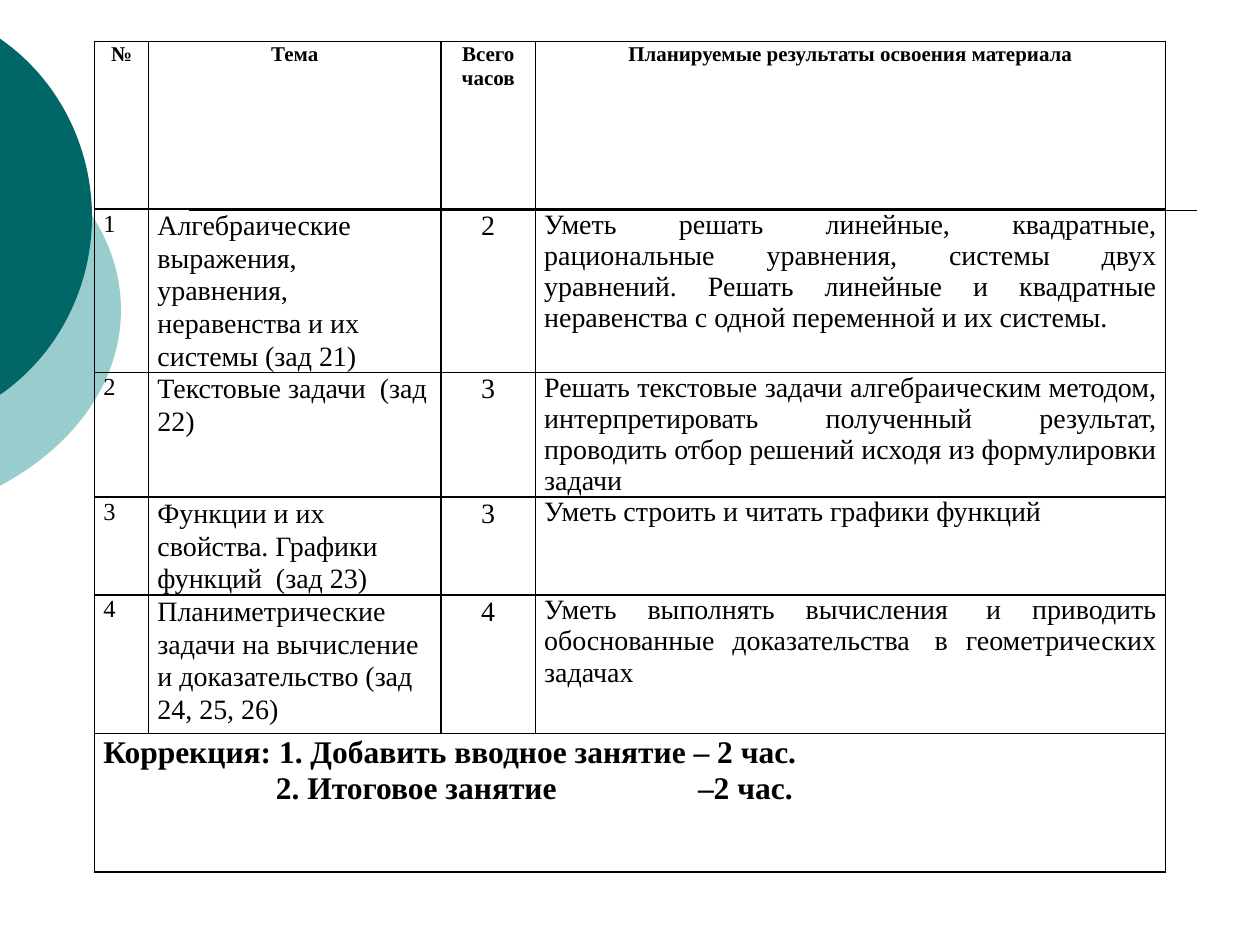
from dataclasses import dataclass

from lxml.etree import SubElement
from pptx import Presentation
from pptx.dml.color import RGBColor
from pptx.enum.shapes import MSO_CONNECTOR
from pptx.enum.text import PP_ALIGN as Align
from pptx.oxml.ns import qn
from pptx.util import Inches, Pt


@dataclass(frozen=True)
class Theme:
    font: str = "Times New Roman"
    ink: RGBColor = RGBColor(0, 0, 0)
    dark: RGBColor = RGBColor(0x00, 0x66, 0x66)
    light: RGBColor = RGBColor(0x99, 0xCC, 0xCC)
    header: int = 12
    number: int = 14
    body: int = 16
    note: int = 18
    rule: int = 1


theme = Theme()
NO_BREAK_SPACE = chr(160)


def add_border(cell):
    """Draw a solid line on all four sides of a cell."""
    properties = cell._tc.get_or_add_tcPr()
    for position, side in enumerate(("lnL", "lnR", "lnT", "lnB")):
        line = SubElement(properties, qn(f"a:{side}"), w=str(Pt(theme.rule)))
        fill = SubElement(line, qn("a:solidFill"))
        SubElement(fill, qn("a:srgbClr"), val=str(theme.ink))
        properties.remove(line)
        properties.insert(position, line)


def write_cell(cell, lines, size, align=Align.LEFT, bold=False, spacing=1.05):
    """Fill a cell with paragraphs of one style."""
    cell.margin_left = cell.margin_right = Inches(0.07)
    cell.margin_top = cell.margin_bottom = 0
    cell.text = "\n".join(lines)
    for paragraph in cell.text_frame.paragraphs:
        paragraph.alignment = align
        paragraph.line_spacing = spacing
        font = paragraph.font
        font.name, font.size, font.bold = theme.font, Pt(size), bold
        font.color.rgb = theme.ink


presentation = Presentation()
presentation.slide_width, presentation.slide_height = Inches(10), Inches(7.5)
slide = presentation.slides.add_slide(presentation.slide_layouts[6])

# Round segments cut by the left edge: color, frame, then the upper curve
# (start, two controls, end); the lower curve mirrors it about its end
segments = [
    (theme.light, (-3.54, 0.75, 4.5, 3.42),
     [(-0.01, 1.06), (0.6, 1.38), (0.96, 1.9), (0.96, 2.46)]),
    (theme.dark, (-2.65, 0, 3.38, 3.45),
     [(-0.01, 0.3), (0.46, 0.62), (0.73, 1.16), (0.73, 1.72)]),
]
for color, (left, top, width, height), upper in segments:
    middle = upper[-1][1]
    lower = [(x, 2 * middle - y) for x, y in reversed(upper[:-1])]
    builder = slide.shapes.build_freeform(Inches(left), Inches(top))
    builder.add_line_segments([(Inches(left + width), Inches(top + height))])
    shape = builder.convert_to_shape()
    shape.shadow.inherit = False
    shape.fill.solid()
    shape.fill.fore_color.rgb = color
    shape.line.fill.background()

    # Replace the straight outline by the two Bezier curves
    outline = shape._element.spPr.find(".//" + qn("a:pathLst"))[0]
    for child in list(outline):
        outline.remove(child)
    commands = [("moveTo", upper[:1]), ("cubicBezTo", upper[1:]),
                ("cubicBezTo", lower), ("close", [])]
    for command, points in commands:
        element = SubElement(outline, qn(f"a:{command}"))
        for x, y in points:
            SubElement(element, qn("a:pt"),
                       x=str(Inches(x - left)), y=str(Inches(y - top)))

# Horizontal rule behind the table
rule = slide.shapes.add_connector(
    MSO_CONNECTOR.STRAIGHT, Inches(1.5), Inches(1.67), Inches(9.5), Inches(1.67))
rule.line.color.rgb = theme.ink
rule.line.width = Pt(theme.rule)
SubElement(rule._element.spPr, qn("a:effectLst"))

# Table grid
column_widths = [0.43, 2.32, 0.75, 5]
row_heights = [1.33, 0.82, 0.82, 0.68, 1.1, 1.1]
table = slide.shapes.add_table(
    len(row_heights), len(column_widths), Inches(0.75), Inches(0.33),
    Inches(sum(column_widths)), Inches(sum(row_heights))).table
table.first_row = table.horz_banding = False
for column, width in zip(table.columns, column_widths):
    column.width = Inches(width)
for row, height in zip(table.rows, row_heights):
    row.height = Inches(height)
for cell in table.iter_cells():
    cell.fill.background()
    add_border(cell)

# Header row
headings = ["№", "Тема", "Всего часов", "Планируемые результаты освоения материала"]
for column, heading in enumerate(headings):
    write_cell(table.cell(0, column), [heading], theme.header, Align.CENTER, bold=True)

# Topics: name, hours, planned results
topics = [
    ("Алгебраические выражения, уравнения, неравенства и их системы (зад 21)", 2,
     "Уметь решать линейные, квадратные, рациональные уравнения, системы двух "
     "уравнений. Решать линейные и квадратные неравенства с одной переменной "
     "и их системы."),
    ("Текстовые задачи  (зад 22)", 3,
     "Решать текстовые задачи алгебраическим методом, интерпретировать полученный "
     "результат, проводить отбор решений исходя из формулировки задачи"),
    ("Функции и их свойства. Графики функций  (зад 23)", 3,
     "Уметь строить и читать графики функций"),
    ("Планиметрические задачи на вычисление и доказательство (зад 24, 25, 26)", 4,
     f"Уметь выполнять вычисления {NO_BREAK_SPACE}и приводить обоснованные "
     f"доказательства {NO_BREAK_SPACE}в геометрических задачах"),
]
for number, (topic, hours, results) in enumerate(topics, start=1):
    write_cell(table.cell(number, 0), [str(number)], theme.number)
    write_cell(table.cell(number, 1), [topic], theme.body)
    write_cell(table.cell(number, 2), [str(hours)], theme.body, Align.CENTER)
    write_cell(table.cell(number, 3), [results], theme.body, Align.JUSTIFY, spacing=1.0)

# Correction note across the last row, second line set on tab stops
note = table.cell(5, 0)
note.merge(table.cell(5, 3))
write_cell(note, ["Коррекция: 1. Добавить вводное занятие – 2 час.",
                  "\t2. Итоговое занятие\t–2 час."], theme.note, bold=True)
properties = note.text_frame.paragraphs[1]._p.get_or_add_pPr()
tabs = SubElement(properties, qn("a:tabLst"))
for stop in (1.37, 4.72):
    SubElement(tabs, qn("a:tab"), pos=str(Inches(stop)), algn="l")
properties.find(qn("a:defRPr")).addprevious(tabs)

presentation.save("out.pptx")
